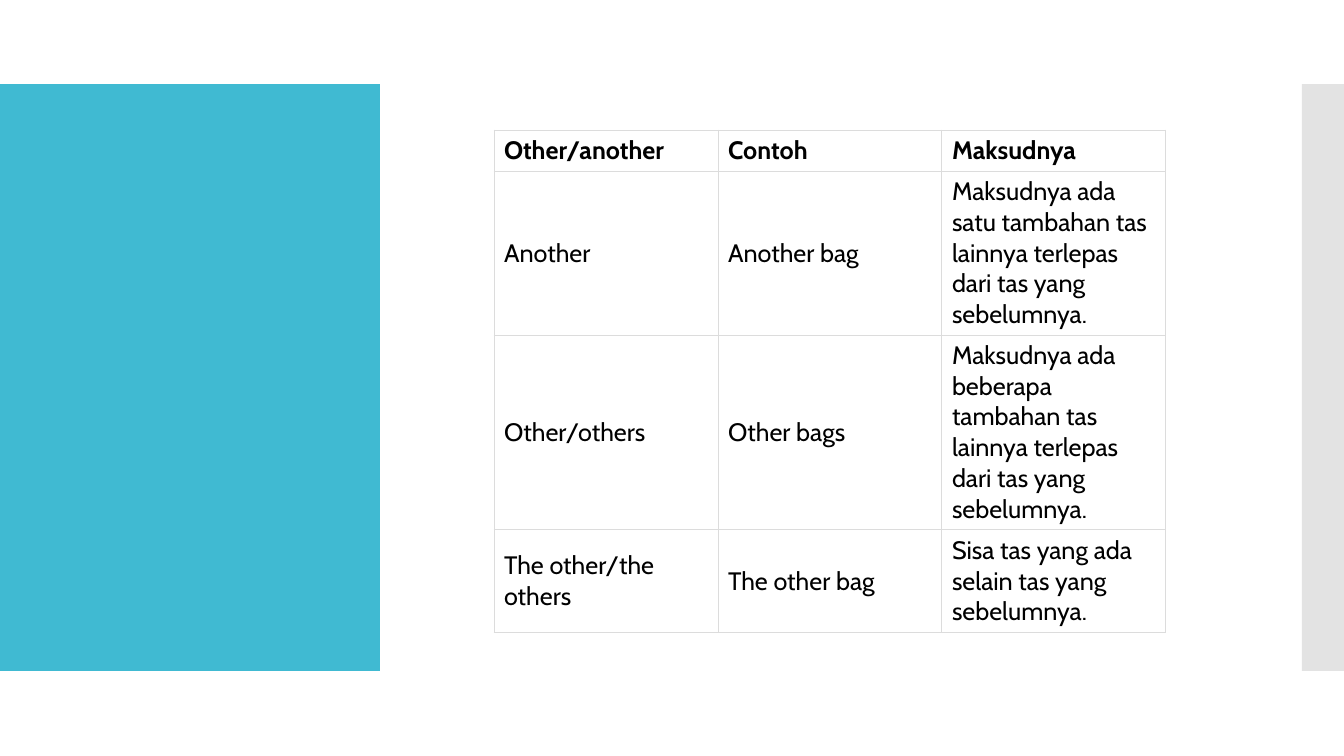
from lxml.etree import SubElement
from pptx import Presentation
from pptx.dml.color import RGBColor
from pptx.enum.shapes import MSO_SHAPE
from pptx.enum.text import MSO_ANCHOR
from pptx.oxml import parse_xml
from pptx.oxml.ns import nsdecls, qn
from pptx.util import Pt

# Content
ROWS = [
    ("Other/another", "Contoh", "Maksudnya"),
    ("Another", "Another bag",
     "Maksudnya ada satu tambahan tas lainnya terlepas dari tas yang sebelumnya."),
    ("Other/others", "Other bags",
     "Maksudnya ada beberapa tambahan tas lainnya terlepas dari tas yang sebelumnya."),
    ("The other/the others", "The other bag",
     "Sisa tas yang ada selain tas yang sebelumnya."),
]
THEME = {"font": "Cabin", "size": 18, "text": "000000", "border": "DCDCDC",
         "border_width": 0.75, "panel": "40BAD2", "strip": "C8C8C8"}

# Layout in px
SLIDE_W, SLIDE_H = 1344, 756
BAND_TOP, BAND_H = 84, 587
PANEL_W, STRIP_W = 380, 42
TABLE_LEFT, TABLE_TOP, COL_W = 494, 130, 224
ROW_HEIGHTS = [41, 164, 194, 103]
BANDS = [(0, PANEL_W, "panel", 100), (SLIDE_W - STRIP_W, STRIP_W, "strip", 50)]


def px(n):
    return round(n * 914400 / 100.8)


def add_band(s, left, width, color, opacity):
    band = s.shapes.add_shape(MSO_SHAPE.RECTANGLE, px(left), px(BAND_TOP),
                              px(width), px(BAND_H))
    band.shadow.inherit = False
    band.fill.solid()
    band.fill.fore_color.rgb = RGBColor.from_string(THEME[color])
    band.line.fill.background()
    if opacity < 100:
        rgb = band.fill._xPr.find(".//" + qn("a:srgbClr"))
        SubElement(rgb, qn("a:alpha"), val=str(opacity * 1000))


def add_borders(cell):
    tc_pr = cell._tc.get_or_add_tcPr()
    width = Pt(THEME["border_width"])
    for i, side in enumerate(("lnL", "lnR", "lnT", "lnB")):
        tc_pr.insert(i, parse_xml(
            f'<a:{side} {nsdecls("a")} w="{width}"><a:solidFill>'
            f'<a:srgbClr val="{THEME["border"]}"/></a:solidFill></a:{side}>'))


def fill_cell(cell, text, bold):
    cell.fill.background()
    cell.vertical_anchor = MSO_ANCHOR.MIDDLE
    r = cell.text_frame.paragraphs[0].add_run()
    r.text = text
    formats = {"name": THEME["font"], "size": Pt(THEME["size"]), "bold": bold}
    for name, value in formats.items():
        setattr(r.font, name, value)
    r.font.color.rgb = RGBColor.from_string(THEME["text"])
    add_borders(cell)


def add_word_table(s):
    n_cols = len(ROWS[0])
    table = s.shapes.add_table(len(ROWS), n_cols, px(TABLE_LEFT), px(TABLE_TOP),
                               px(COL_W * n_cols), px(sum(ROW_HEIGHTS))).table
    table.first_row = table.horz_banding = False
    for column in table.columns:
        column.width = px(COL_W)
    for i, (texts, height) in enumerate(zip(ROWS, ROW_HEIGHTS)):
        table.rows[i].height = px(height)
        for j, text in enumerate(texts):
            fill_cell(table.cell(i, j), text, bold=i == 0)


def main():
    prs = Presentation()
    prs.slide_width, prs.slide_height = px(SLIDE_W), px(SLIDE_H)
    s = prs.slides.add_slide(prs.slide_layouts[6])
    # Side bands
    for band in BANDS:
        add_band(s, *band)
    # Table
    add_word_table(s)
    prs.save("out.pptx")


if __name__ == "__main__":
    main()
